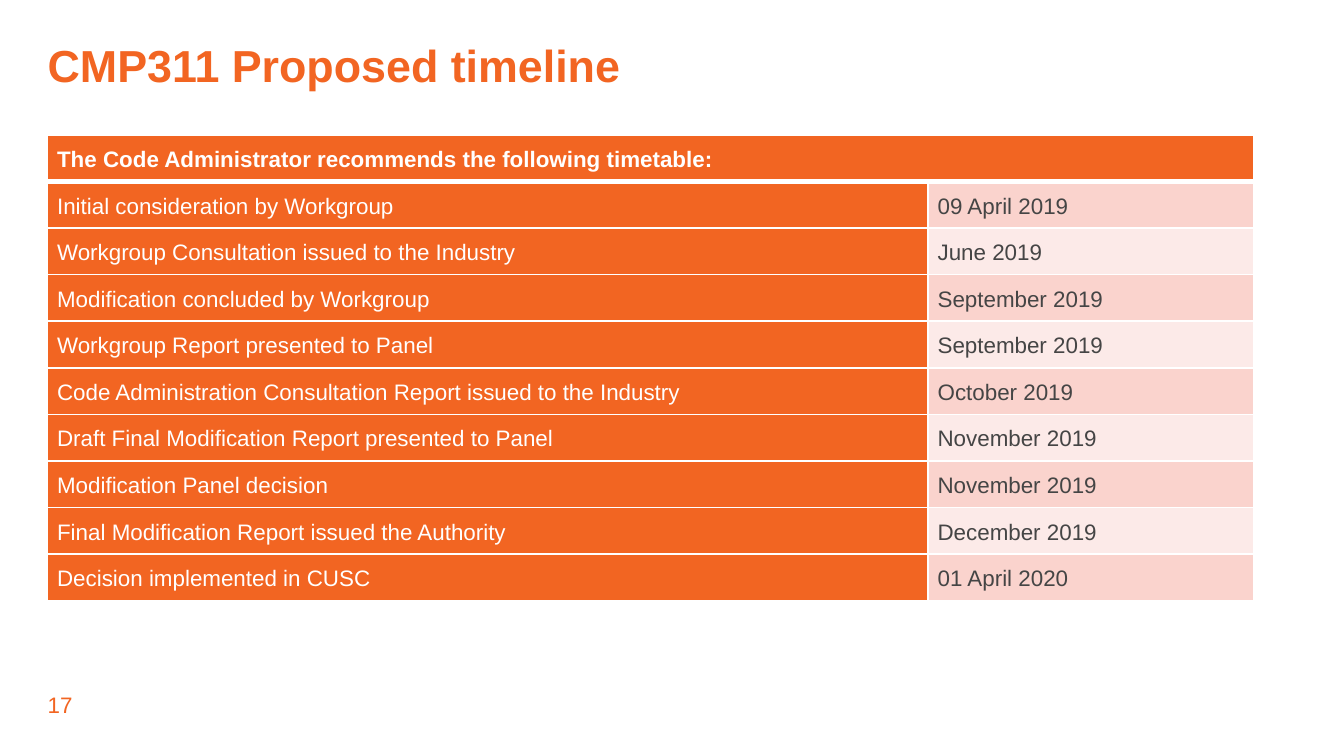
"""Builds the CMP311 proposed timeline slide."""
from pptx import Presentation
from pptx.dml.color import RGBColor
from pptx.enum.text import MSO_ANCHOR
from pptx.oxml.ns import qn
from pptx.util import Pt
from lxml import etree

MIDDLE = MSO_ANCHOR.MIDDLE
FONT = "Arial"
COLOURS = {
    "orange": "F26522",
    "white": "FFFFFF",
    "grey": "454545",
    "pink": "FAD3CD",
    "pale": "FCEAE8",
}
HEADING = "The Code Administrator recommends the following timetable:"
TIMETABLE = [
    ("Initial consideration by Workgroup", "09 April 2019"),
    ("Workgroup Consultation issued to the Industry", "June 2019"),
    ("Modification concluded by Workgroup", "September 2019"),
    ("Workgroup Report presented to Panel", "September 2019"),
    ("Code Administration Consultation Report issued to the Industry", "October 2019"),
    ("Draft Final Modification Report presented to Panel", "November 2019"),
    ("Modification Panel decision", "November 2019"),
    ("Final Modification Report issued the Authority", "December 2019"),
    ("Decision implemented in CUSC", "01 April 2020"),
]
DATE_SHARE = 0.27


def rgb(name):
    """Return the named colour."""
    return RGBColor.from_string(COLOURS[name])


def write_text(frame, text, size=12, colour="orange", bold=False, spacing=None):
    """Write one formatted paragraph into a text frame."""
    para = frame.paragraphs[0]
    para.line_spacing = spacing
    span = para.add_run()
    span.text = text
    span.font.name = FONT
    span.font.size = Pt(size)
    span.font.bold = bold
    span.font.color.rgb = rgb(colour)


def add_label(page, box, text, **style):
    """Add a text box without insets."""
    frame = page.shapes.add_textbox(*map(Pt, box)).text_frame
    frame.word_wrap = True
    frame.margin_left = frame.margin_right = 0
    frame.margin_top = frame.margin_bottom = 0
    write_text(frame, text, **style)


def set_borders(cell, top, bottom):
    """Give a cell white borders, with top and bottom widths in points."""
    properties = cell._tc.get_or_add_tcPr()
    for side, width in (("L", 1), ("R", 1), ("T", top), ("B", bottom)):
        line = etree.SubElement(properties, qn(f"a:ln{side}"), w=str(Pt(width)))
        fill = etree.SubElement(line, qn("a:solidFill"))
        etree.SubElement(fill, qn("a:srgbClr"), val=COLOURS["white"])


def style_cell(cell, fill, top=1, bottom=1):
    """Set the borders, fill, insets and anchor of a cell."""
    set_borders(cell, top, bottom)
    cell.fill.solid()
    cell.fill.fore_color.rgb = rgb(fill)
    cell.margin_left = cell.margin_right = Pt(5.1)
    cell.margin_top = cell.margin_bottom = 0
    cell.vertical_anchor = MIDDLE


def add_timetable(page, box):
    """Add the timetable with its heading row across both columns."""
    left, top, width, height = box
    count = len(TIMETABLE) + 1
    table = page.shapes.add_table(count, 2, *map(Pt, box)).table
    table.columns[0].width = Pt(width * (1 - DATE_SHARE))
    table.columns[1].width = Pt(width * DATE_SHARE)
    for row in table.rows:
        row.height = Pt(height / count)

    heading = table.cell(0, 0)
    heading.merge(table.cell(0, 1))
    for column in range(2):
        style_cell(table.cell(0, column), "orange", bottom=3)
    write_text(heading.text_frame, HEADING, colour="white", bold=True, spacing=Pt(15))

    for index, entry in enumerate(TIMETABLE, start=1):
        fills = ("orange", "pink" if index % 2 else "pale")
        for column, colour in enumerate(("white", "grey")):
            cell = table.cell(index, column)
            style_cell(cell, fills[column], top=3 if index == 1 else 1)
            write_text(cell.text_frame, entry[column], colour=colour, spacing=Pt(15))


def build_timeline(page, box):
    """Place the title, timetable and page number in the given box."""
    left, top, width, height = box
    add_label(page, (left, top, width, 23), "CMP311 Proposed timeline",
              size=24, bold=True, spacing=0.8)
    add_timetable(page, (left, top + 46.3, 646.2, 249.5))
    add_label(page, (left, top + height - 14.4, 65.5, 14.4), "17")


def main():
    """Create and save the deck."""
    deck = Presentation()
    deck.slide_width, deck.slide_height = Pt(720), Pt(405)
    page = deck.slides.add_slide(deck.slide_layouts[6])
    build_timeline(page, (25.5, 26, 669, 358.5))
    deck.save("out.pptx")


if __name__ == "__main__":
    main()
